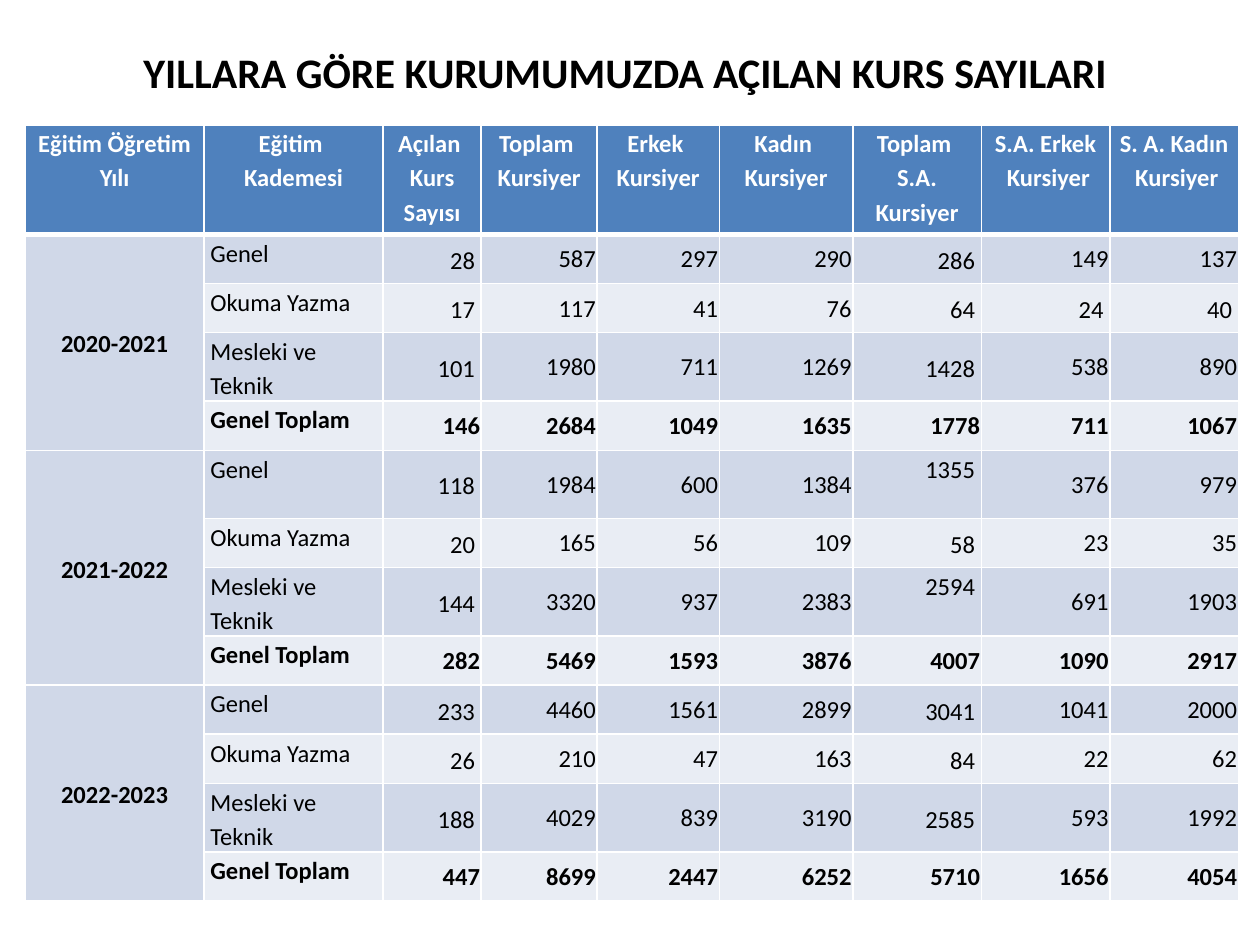
from lxml.etree import SubElement
from pptx import Presentation
from pptx.dml.color import RGBColor
from pptx.enum.text import MSO_ANCHOR, PP_ALIGN
from pptx.oxml.ns import qn
from pptx.util import Inches, Pt

FONT = "Calibri"
WHITE, BLACK = "FFFFFF", "000000"
HEADER_FILL, DARK_BAND, LIGHT_BAND = "4F81BD", "D0D8E8", "E9EDF4"

COLUMN_WIDTHS = [1.42, 1.42, 0.78, 0.92, 0.97, 1.06, 1.02, 1.02, 1.02]
HEADER_HEIGHT, ROW_HEIGHT, TALL_HEIGHT = 0.87, 0.39, 0.54
HEADERS = ["Eğitim Öğretim Yılı", "Eğitim \nKademesi", "Açılan \nKurs Sayısı",
           "Toplam \nKursiyer", "Erkek \nKursiyer", "Kadın \nKursiyer",
           "Toplam \nS.A. Kursiyer", "S.A. Erkek\n Kursiyer", "S. A. Kadın\n Kursiyer"]
LEVELS = ["Genel", "Okuma Yazma", "Mesleki ve Teknik", "Genel Toplam"]
YEARS = {
    "2020-2021": [[28, 587, 297, 290, 286, 149, 137],
                  [17, 117, 41, 76, 64, 24, 40],
                  [101, 1980, 711, 1269, 1428, 538, 890],
                  [146, 2684, 1049, 1635, 1778, 711, 1067]],
    "2021-2022": [[118, 1984, 600, 1384, 1355, 376, 979],
                  [20, 165, 56, 109, 58, 23, 35],
                  [144, 3320, 937, 2383, 2594, 691, 1903],
                  [282, 5469, 1593, 3876, 4007, 1090, 2917]],
    "2022-2023": [[233, 4460, 1561, 2899, 3041, 1041, 2000],
                  [26, 210, 47, 163, 84, 22, 62],
                  [188, 4029, 839, 3190, 2585, 593, 1992],
                  [447, 8699, 2447, 6252, 5710, 1656, 4054]],
}
PADDED_COLUMNS = (2, 6)
PADDED_CELLS = ((2, 7), (2, 8))
TOP_CELLS = ((5, 6), (7, 6))
TALL_ROW = 5


def color(hex_code):
    return RGBColor.from_string(hex_code)


def format_text(para, size, hex_code, bold):
    for span in para.runs:
        span.font.name = FONT
        span.font.size = Pt(size)
        span.font.bold = bold
        span.font.color.rgb = color(hex_code)


def paint_cell(cell, fill, top=1, bottom=1):
    """Borders go in before the fill, as the schema orders them."""
    properties = cell._tc.get_or_add_tcPr()
    for side, width in (("L", 1), ("R", 1), ("T", top), ("B", bottom)):
        line = SubElement(properties, qn(f"a:ln{side}"), w=str(Pt(width)))
        solid = SubElement(line, qn("a:solidFill"))
        SubElement(solid, qn("a:srgbClr"), val=WHITE)
    cell.fill.solid()
    cell.fill.fore_color.rgb = color(fill)


def write_cell(cell, text, align, anchor=MSO_ANCHOR.MIDDLE, bold=False,
               hex_code=BLACK, padded=True):
    cell.margin_left = cell.margin_right = Inches(0.05 if padded else 0.01)
    cell.margin_top = Inches(0 if padded else 0.01)
    cell.margin_bottom = 0
    cell.vertical_anchor = anchor
    para = cell.text_frame.paragraphs[0]
    para.text = text
    para.alignment = align
    if padded:
        para.line_spacing = 1.15
    format_text(para, 14, hex_code, bold)


def add_title(page, left, top, width, height):
    title = page.shapes.title
    title.left, title.top = Inches(left), Inches(top)
    title.width, title.height = Inches(width), Inches(height)
    frame = title.text_frame
    frame.text = "YILLARA GÖRE KURUMUMUZDA AÇILAN KURS SAYILARI "
    frame.vertical_anchor = MSO_ANCHOR.MIDDLE
    frame.paragraphs[0].alignment = PP_ALIGN.CENTER
    format_text(frame.paragraphs[0], 24, BLACK, True)


def fill_year(table, first_row, year, rows):
    # Year cell spans all levels
    table.cell(first_row, 0).merge(table.cell(first_row + len(LEVELS) - 1, 0))
    write_cell(table.cell(first_row, 0), year, PP_ALIGN.CENTER, bold=True)

    for offset, (level, values) in enumerate(zip(LEVELS, rows)):
        row = first_row + offset
        total = level == LEVELS[-1]
        band = LIGHT_BAND if offset % 2 else DARK_BAND
        for column in range(len(HEADERS)):
            paint_cell(table.cell(row, column), band if column else DARK_BAND,
                       top=3 if row == 1 else 1)
        write_cell(table.cell(row, 1), level, PP_ALIGN.LEFT, MSO_ANCHOR.TOP, total)
        for column, value in enumerate(values, start=2):
            position = (row, column)
            padded = not total and (column in PADDED_COLUMNS or position in PADDED_CELLS)
            anchor = MSO_ANCHOR.TOP if position in TOP_CELLS else MSO_ANCHOR.MIDDLE
            write_cell(table.cell(row, column), str(value), PP_ALIGN.RIGHT,
                       anchor, total, padded=padded)


def add_course_table(page, left, top, width, height):
    row_count = 1 + len(YEARS) * len(LEVELS)
    table = page.shapes.add_table(row_count, len(HEADERS), Inches(left), Inches(top),
                                  Inches(width), Inches(height)).table
    for column, column_width in zip(table.columns, COLUMN_WIDTHS):
        column.width = Inches(column_width)
    for row in table.rows:
        row.height = Inches(ROW_HEIGHT)
    table.rows[0].height = Inches(HEADER_HEIGHT)
    table.rows[TALL_ROW].height = Inches(TALL_HEIGHT)

    # Header row
    for column, text in enumerate(HEADERS):
        cell = table.cell(0, column)
        paint_cell(cell, HEADER_FILL, bottom=3)
        write_cell(cell, text, PP_ALIGN.CENTER, MSO_ANCHOR.TOP, True, WHITE)

    # One block of rows for each school year
    for index, (year, rows) in enumerate(YEARS.items()):
        fill_year(table, 1 + index * len(LEVELS), year, rows)


def main():
    deck = Presentation()
    deck.slide_width, deck.slide_height = Inches(10), Inches(7.5)
    page = deck.slides.add_slide(deck.slide_layouts[5])
    add_title(page, 0.5, 0.3, 9, 0.54)
    add_course_table(page, 0.2, 0.99, 9.61, 6.16)
    deck.save("out.pptx")


if __name__ == "__main__":
    main()
